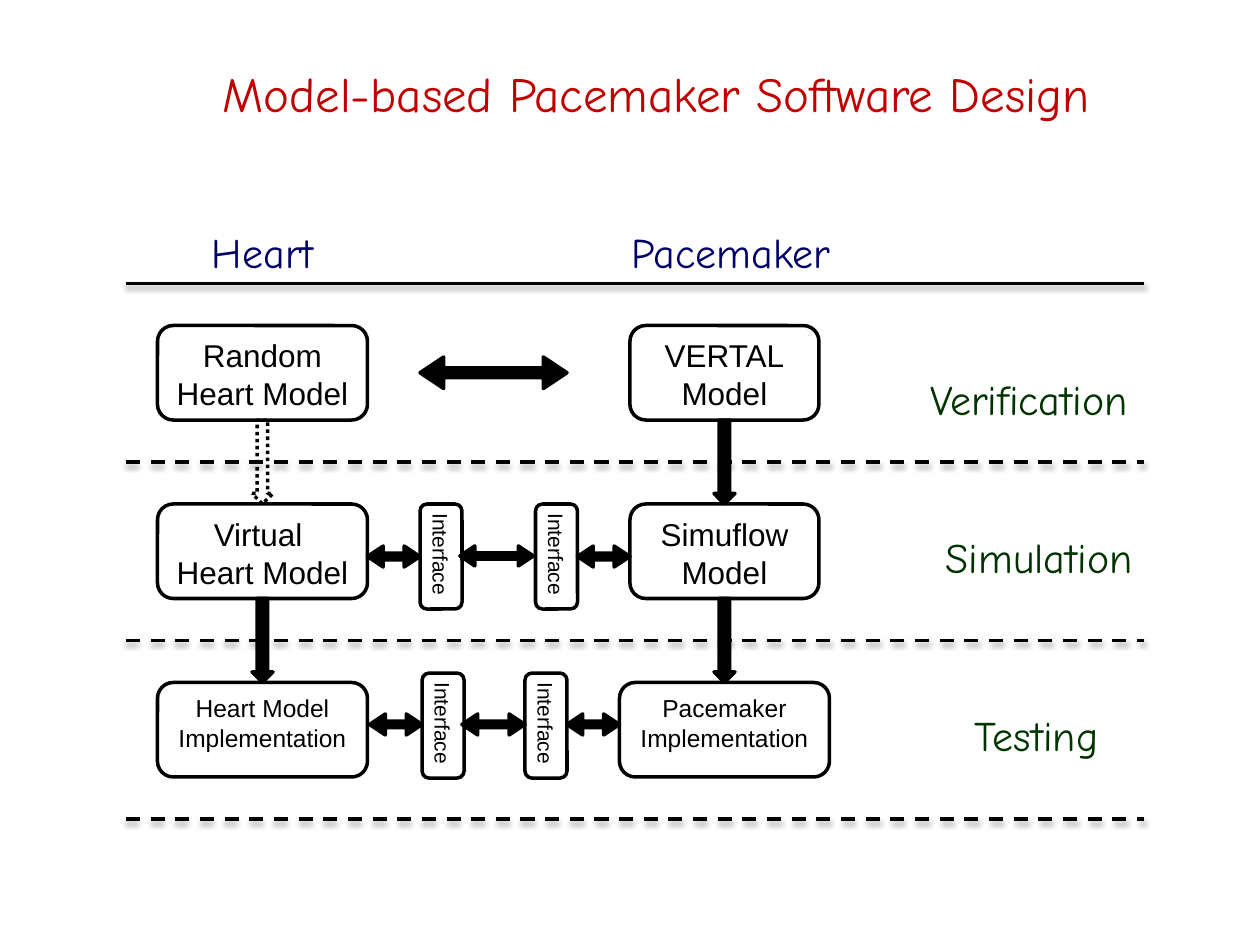
from typing import NamedTuple

from lxml import etree
from pptx import Presentation
from pptx.dml.color import RGBColor
from pptx.enum.dml import MSO_LINE
from pptx.enum.shapes import MSO_CONNECTOR, MSO_SHAPE
from pptx.enum.text import MSO_ANCHOR, MSO_AUTO_SIZE, PP_ALIGN
from pptx.oxml.ns import qn
from pptx.util import Emu, Pt

PX = 7620
BLACK = RGBColor(0x00, 0x00, 0x00)
WHITE = RGBColor(0xFF, 0xFF, 0xFF)
RED = RGBColor(0xC0, 0x00, 0x00)
GREEN = RGBColor(0x00, 0x33, 0x00)
NAVY = RGBColor(0x00, 0x00, 0x66)
HAND, SANS = "Comic Neue", "Arial"
ROUND = MSO_SHAPE.ROUNDED_RECTANGLE
DOWN = MSO_SHAPE.DOWN_ARROW
BOTH = MSO_SHAPE.LEFT_RIGHT_ARROW
STRAIGHT = MSO_CONNECTOR.STRAIGHT
DASH, DOT = MSO_LINE.DASH, MSO_LINE.ROUND_DOT
TOP, MIDDLE = MSO_ANCHOR.TOP, MSO_ANCHOR.MIDDLE
LEFT, CENTER = PP_ALIGN.LEFT, PP_ALIGN.CENTER
GROW = MSO_AUTO_SIZE.SHAPE_TO_FIT_TEXT


class Area(NamedTuple):
    left: int
    top: int
    width: int
    height: int

    def emu(self) -> list[Emu]:
        return [Emu(n * PX) for n in self]


class Label(NamedTuple):
    text: str
    area: Area
    color: RGBColor


class Box(NamedTuple):
    lines: tuple[str, ...]
    area: Area
    size: int = 18


LABELS = [
    Label("Heart", Area(190, 210, 136, 60), NAVY),
    Label("Pacemaker", Area(590, 210, 224, 60), NAVY),
    Label("Verification", Area(874, 350, 250, 60), GREEN),
    Label("Simulation", Area(889, 500, 221, 60), GREEN),
    Label("Testing", Area(916, 670, 167, 60), GREEN),
]
BOXES = [
    Box(("Random", "Heart Model"), Area(150, 310, 200, 90)),
    Box(("Virtual ", "Heart Model"), Area(150, 480, 200, 90)),
    Box(("Heart Model Implementation",), Area(150, 650, 200, 90), 14),
    Box(("VERTAL", "Model"), Area(600, 310, 180, 90)),
    Box(("Simuflow", "Model"), Area(600, 480, 180, 90)),
    Box(("Pacemaker", "Implementation"), Area(590, 650, 200, 90), 14),
]
BARS = [(400, 480), (510, 480), (402, 641), (500, 641)]
STEPS = [(680, 400), (680, 570), (240, 570)]
LINKS = [
    Area(400, 340, 140, 30),
    Area(350, 520, 50, 20),
    Area(438, 520, 70, 19),
    Area(550, 520, 50, 20),
    Area(352, 680, 50, 20),
    Area(440, 680, 60, 20),
    Area(540, 680, 50, 20),
]


def write(frame, *lines: str, font: str, size: int, color: RGBColor,
          align=CENTER, anchor=TOP, wrap: bool = True) -> None:
    frame.word_wrap = wrap
    frame.vertical_anchor = anchor
    for i, line in enumerate(lines):
        para = frame.add_paragraph() if i else frame.paragraphs[0]
        para.alignment = align
        run = para.add_run()
        run.text = line
        run.font.name = font
        run.font.size = Pt(size)
        run.font.color.rgb = color


def draw_shape(slide, kind, area: Area, fill: RGBColor | None):
    shape = slide.shapes.add_shape(kind, *area.emu())
    shape.shadow.inherit = False
    if fill is None:
        shape.fill.background()
    else:
        shape.fill.solid()
        shape.fill.fore_color.rgb = fill
    shape.line.color.rgb = BLACK
    shape.line.width = Pt(2)
    return shape


def draw_rule(slide, top: int, dash=None) -> None:
    y = Emu(top * PX)
    rule = slide.shapes.add_connector(STRAIGHT, Emu(120 * PX), y, Emu(1090 * PX), y)
    rule.line.color.rgb = BLACK
    rule.line.width = Pt(2)
    rule.line.dash_style = dash
    props = rule._element.spPr
    effects = etree.SubElement(props, qn("a:effectLst"))
    shade = etree.SubElement(effects, qn("a:outerShdw"), blurRad="40000",
                             dist="20000", dir="5400000", rotWithShape="0")
    tint = etree.SubElement(shade, qn("a:srgbClr"), val=str(BLACK))
    etree.SubElement(tint, qn("a:alpha"), val="38000")


def draw_label(slide, label: Label) -> None:
    frame = slide.shapes.add_textbox(*label.area.emu()).text_frame
    write(frame, label.text, font=HAND, size=24, color=label.color,
          align=LEFT, wrap=False)
    frame.auto_size = GROW


def draw_box(slide, box: Box) -> None:
    shape = draw_shape(slide, ROUND, box.area, WHITE)
    write(shape.text_frame, *box.lines, font=SANS, size=box.size, color=BLACK)


def draw_bar(slide, left: int, top: int) -> None:
    frame = draw_shape(slide, ROUND, Area(left, top, 40, 100), WHITE).text_frame
    write(frame, "Interface", font=SANS, size=12, color=BLACK, align=LEFT, anchor=MIDDLE)
    frame.margin_left = frame.margin_right = Emu(7 * PX)
    frame.margin_top = frame.margin_bottom = Emu(7 * PX)
    frame._txBody.bodyPr.set("vert", "eaVert")


def draw_step(slide, left: int, top: int, fill: RGBColor | None = BLACK):
    return draw_shape(slide, DOWN, Area(left, top, 20, 80), fill)


def draw_link(slide, area: Area) -> None:
    arrow = draw_shape(slide, BOTH, area, BLACK)
    arrow.adjustments[0] = 0.31
    arrow.adjustments[1] = 0.75


def main() -> None:
    deck = Presentation()
    deck.slide_width, deck.slide_height = Emu(1200 * PX), Emu(900 * PX)
    slide = deck.slides.add_slide(deck.slide_layouts[5])
    title = slide.shapes.title
    title.left, title.top, title.width, title.height = Area(90, 10, 1070, 156).emu()
    write(title.text_frame, "Model-based Pacemaker Software Design",
          font=HAND, size=28, color=RED, anchor=MIDDLE)
    draw_rule(slide, 270)
    for top in range(440, 781, 170):
        draw_rule(slide, top, DASH)
    for label in LABELS:
        draw_label(slide, label)
    for box in BOXES:
        draw_box(slide, box)
    for left, top in STEPS:
        draw_step(slide, left, top)
    draw_step(slide, 240, 400, None).line.dash_style = DOT
    for left, top in BARS:
        draw_bar(slide, left, top)
    for area in LINKS:
        draw_link(slide, area)
    deck.save("out.pptx")


if __name__ == "__main__":
    main()
